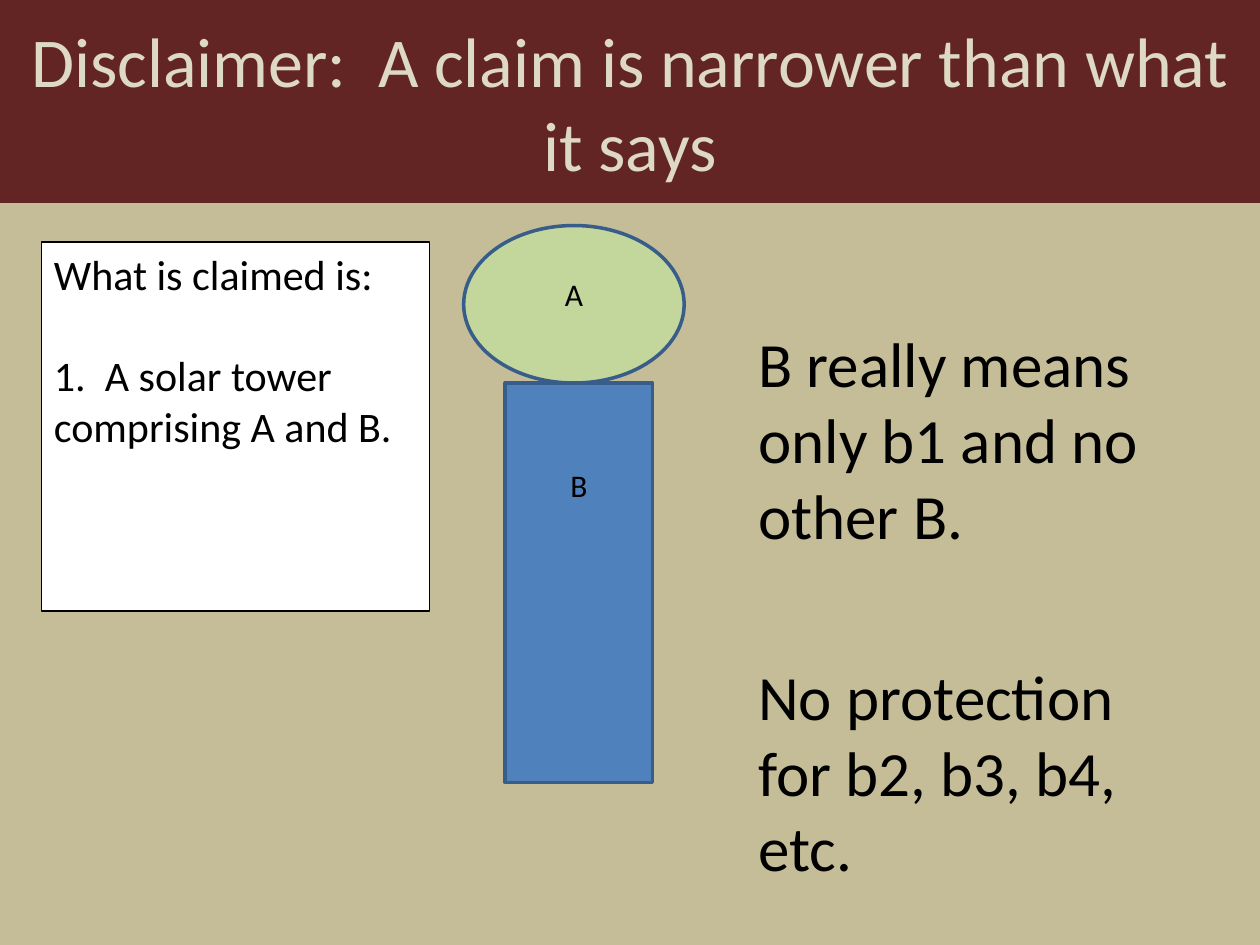
"""Build a slide explaining that a patent claim is narrower than its wording."""
from dataclasses import dataclass
from typing import Optional

import pptx
import pptx.dml.color
import pptx.enum.shapes
import pptx.enum.text
import pptx.util

Inches = pptx.util.Inches
Pt = pptx.util.Pt
Shape = pptx.enum.shapes.MSO_SHAPE
Align = pptx.enum.text.PP_ALIGN
Anchor = pptx.enum.text.MSO_ANCHOR


@dataclass
class Area:
    left: float
    top: float
    width: float
    height: float

    def lengths(self) -> tuple:
        return tuple(Inches(n) for n in (self.left, self.top, self.width, self.height))


@dataclass
class Label:
    text: str
    area: Area
    size: int
    align: Align = Align.LEFT


def colour(value: str) -> pptx.dml.color.RGBColor:
    return pptx.dml.color.RGBColor.from_string(value)


def add_panel(page, kind: Shape, area: Area, fill: str,
              line: Optional[str] = None, line_width: float = 2):
    panel = page.shapes.add_shape(kind, *area.lengths())
    panel.shadow.inherit = False
    panel.fill.solid()
    panel.fill.fore_color.rgb = colour(fill)
    if line:
        panel.line.color.rgb = colour(line)
        panel.line.width = Pt(line_width)
    else:
        panel.line.fill.background()
    return panel


def write_text(box, text: str, *, size: int, color: str = "000000",
               align: Align = Align.LEFT, anchor: Anchor = Anchor.TOP,
               gap: float = 0) -> None:
    frame = box.text_frame
    frame.word_wrap = True
    frame.vertical_anchor = anchor
    for index, line in enumerate(text.split("\n")):
        para = frame.add_paragraph() if index else frame.paragraphs[0]
        para.alignment = align
        para.space_before = Pt(gap if index else 0)
        span = para.add_run()
        span.text = line
        span.font.name = "Calibri"
        span.font.size = Pt(size)
        span.font.color.rgb = colour(color)


def add_label(page, label: Label) -> None:
    box = page.shapes.add_textbox(*label.area.lengths())
    write_text(box, label.text, size=label.size, align=label.align)


LABELS = [
    Label("A", Area(4.18, 2.13, 0.75, 0.4), 18, Align.CENTER),
    Label("B", Area(4.22, 3.65, 0.75, 0.4), 18, Align.CENTER),
    Label("B really means only b1 and no other B.", Area(5.92, 2.53, 3.25, 1.92), 36),
    Label("No protection for b2, b3, b4, etc.", Area(5.92, 5.17, 3.25, 1.92), 36),
]


def main() -> None:
    deck = pptx.Presentation()
    deck.slide_width, deck.slide_height = Inches(10), Inches(7.5)
    page = deck.slides.add_slide(deck.slide_layouts[6])
    page.background.fill.solid()
    page.background.fill.fore_color.rgb = colour("C4BD97")

    title = add_panel(page, Shape.RECTANGLE, Area(0, 0, 10, 1.61), "632523")
    write_text(title, "Disclaimer:  A claim is narrower than what it says", size=40,
               color="DDD9C3", align=Align.CENTER, anchor=Anchor.MIDDLE)
    claim = add_panel(page, Shape.RECTANGLE, Area(0.33, 1.92, 3.08, 2.93), "FFFFFF",
                      "000000", 0.75)
    write_text(claim, "What is claimed is:\n1.  A solar tower comprising A and B.",
               size=24, gap=29.3)

    add_panel(page, Shape.RECTANGLE, Area(4.01, 3.04, 1.17, 3.17), "4F81BD", "385D8A")
    add_panel(page, Shape.OVAL, Area(3.68, 1.79, 1.75, 1.25), "C3D69B", "385D8A")
    for label in LABELS:
        add_label(page, label)
    deck.save("out.pptx")


if __name__ == "__main__":
    main()
